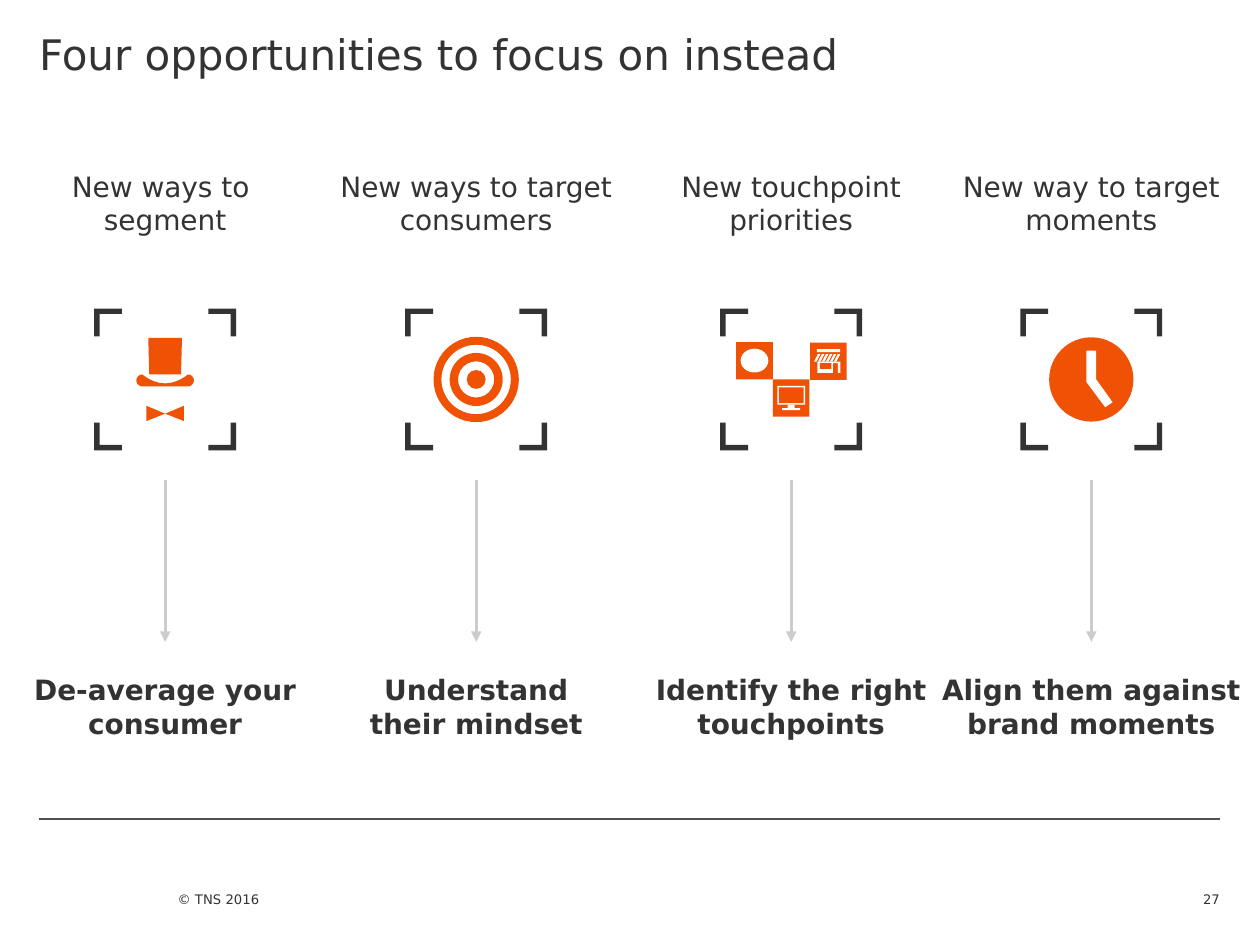
from math import cos, pi, sin

from lxml.etree import SubElement
from pptx import Presentation
from pptx.dml.color import RGBColor
from pptx.enum.shapes import MSO_CONNECTOR, MSO_SHAPE
from pptx.enum.text import MSO_ANCHOR, PP_ALIGN
from pptx.oxml.ns import qn
from pptx.util import Cm, Pt

COLORS = {"text": "333333", "accent": "EF5205", "arrow": "CCCCCC",
          "rule": "525252", "white": "FFFFFF"}
FONT = "DejaVu Sans"
TITLE = "Four opportunities to focus on instead"
COPYRIGHT = "© TNS 2016"
PAGE = "27"

COLUMNS = [
    {"x": 3.33, "head": "New ways to \vsegment", "head_w": 6.2,
     "action": "De-average your consumer", "action_w": 5.41, "icon": "hat"},
    {"x": 9.6, "head": "New ways to target consumers", "head_w": 6.15,
     "action": "Understand their mindset", "action_w": 5.41, "icon": "target"},
    {"x": 15.95, "head": "New touchpoint priorities", "head_w": 5.77,
     "action": "Identify the right touchpoints", "action_w": 5.79, "icon": "touchpoints"},
    {"x": 22, "head": "New way to target moments", "head_w": 6.17,
     "action": "Align them against brand moments", "action_w": 6.1, "icon": "clock"},
]

ICON_Y = 7.65
FRAME = 2.86
CORNER = 0.56
BAND = 0.11
TILE = 0.74


def rect(color, x, y, w, h):
    return MSO_SHAPE.RECTANGLE, color, (x, y, w, h)


def disc(color, d):
    return MSO_SHAPE.OVAL, color, (-d / 2, -d / 2, d, d)


def ring(color, d, band):
    return MSO_SHAPE.DONUT, color, (-d / 2, -d / 2, d, d), band / d


def poly(color, *points):
    return None, color, points


def corner(side_x, side_y):
    out = FRAME / 2
    edge, end = out - BAND, out - CORNER
    outline = ((end, out), (out, out), (out, end), (edge, end), (edge, edge), (end, edge))
    return poly("text", *[(side_x * x, side_y * y) for x, y in outline])


def brim():
    end_x, end_y, radius, dip, steps = 0.46, 0.02, 0.12, 0.18, 12
    turns = [pi * i / steps for i in range(steps + 1)]
    left = [(-end_x - radius * sin(a), end_y - radius * cos(a)) for a in turns]
    right = [(-x, y) for x, y in reversed(left)]
    curve = [(end_x * cos(a), end_y - radius + dip * sin(a) ** 2) for a in turns]
    return left + right + curve


def slat(i):
    x = 0.46 + 0.08 * i
    return poly("white", (x, -0.36), (x + 0.08, -0.51), (x + 0.13, -0.51), (x + 0.05, -0.36))


CORNERS = [corner(x, y) for x in (-1, 1) for y in (-1, 1)]

ICONS = {
    "hat": [
        poly("accent", (-0.34, -0.84), (0.34, -0.84), (0.32, -0.1), (-0.32, -0.1)),
        poly("accent", *brim()),
        *[poly("accent", (side * 0.38, 0.53), (0, 0.69), (side * 0.38, 0.84))
          for side in (-1, 1)],
    ],
    "target": [ring("accent", 1.72, 0.16), ring("accent", 1.07, 0.17), disc("accent", 0.38)],
    "touchpoints": [
        *[rect("accent", x, y, TILE, 0.75)
          for x, y in ((-1.11, -0.75), (-0.37, 0), (0.38, -0.74))],
        (MSO_SHAPE.OVAL, "white", (-1.02, -0.62, 0.56, 0.48)),
        rect("white", 0.52, -0.61, 0.47, 0.06),
        *[slat(i) for i in range(6)],
        poly("white", (0.53, -0.36), (0.99, -0.36), (0.99, -0.13), (0.94, -0.13),
             (0.94, -0.33), (0.84, -0.33), (0.84, -0.13), (0.53, -0.13)),
        rect("accent", 0.58, -0.33, 0.23, 0.12),
        rect("white", -0.28, 0.13, 0.56, 0.38),
        rect("accent", -0.25, 0.16, 0.5, 0.32),
        rect("white", -0.07, 0.51, 0.14, 0.08),
        rect("white", -0.18, 0.58, 0.36, 0.04),
    ],
    "clock": [
        disc("accent", 1.7),
        poly("white", (-0.1, -0.58), (0.1, -0.58), (0.1, 0), (0.43, 0.46),
             (0.28, 0.56), (-0.1, 0.05)),
    ],
}


def rgb(name):
    return RGBColor.from_string(COLORS[name])


def add_text(s, text, box, size, bold=False, align=PP_ALIGN.LEFT,
             anchor=MSO_ANCHOR.TOP, top=0):
    tf = s.shapes.add_textbox(*map(Cm, box)).text_frame
    tf.word_wrap = True
    tf.vertical_anchor = anchor
    tf.margin_left = tf.margin_right = tf.margin_bottom = 0
    tf.margin_top = Cm(top)
    tf.text = text
    p = tf.paragraphs[0]
    p.alignment = align
    for r in p.runs:
        r.font.name = FONT
        r.font.size = Pt(size)
        r.font.bold = bold
        r.font.color.rgb = rgb("text")


def add_line(s, x1, y1, x2, y2, color, width, arrow=False):
    sp = s.shapes.add_connector(MSO_CONNECTOR.STRAIGHT, *map(Cm, (x1, y1, x2, y2)))
    sp.line.color.rgb = rgb(color)
    sp.line.width = Pt(width)
    spPr = sp._element.spPr
    if arrow:
        SubElement(spPr.find(qn("a:ln")), qn("a:tailEnd"), type="triangle")
    SubElement(spPr, qn("a:effectLst"))


def add_part(s, cx, cy, kind, color, coords, *adjustments):
    if kind is None:
        points = [(Cm(cx + x), Cm(cy + y)) for x, y in coords]
        builder = s.shapes.build_freeform(*points[0])
        builder.add_line_segments(points[1:])
        sp = builder.convert_to_shape()
    else:
        x, y, w, h = coords
        sp = s.shapes.add_shape(kind, Cm(cx + x), Cm(cy + y), Cm(w), Cm(h))
    for i, value in enumerate(adjustments):
        sp.adjustments[i] = value
    sp.shadow.inherit = False
    sp.fill.solid()
    sp.fill.fore_color.rgb = rgb(color)
    sp.line.fill.background()


def main():
    prs = Presentation()
    prs.slide_width, prs.slide_height = Cm(25.4), Cm(19.05)
    s = prs.slides.add_slide(prs.slide_layouts[6])

    add_line(s, 0.79, 16.51, 24.59, 16.51, "rule", 0.75)
    add_text(s, COPYRIGHT, (3.58, 17.58, 7.06, 0.7), 7.5, anchor=MSO_ANCHOR.BOTTOM)
    add_text(s, PAGE, (23.19, 17.58, 1.4, 0.7), 7.5, align=PP_ALIGN.RIGHT,
             anchor=MSO_ANCHOR.BOTTOM)
    add_text(s, TITLE, (0.79, 0, 23.8, 2.87), 24, top=0.58)

    for col in COLUMNS:
        x, head_w, action_w = col["x"], col["head_w"], col["action_w"]
        add_text(s, col["head"], (x - head_w / 2, 3.28, head_w, 2.21), 16,
                 align=PP_ALIGN.CENTER, top=0.13)
        for part in CORNERS + ICONS[col["icon"]]:
            add_part(s, x, ICON_Y, *part)
        add_line(s, x, 9.68, x, 12.94, "arrow", 1.5, arrow=True)
        add_text(s, col["action"], (x - action_w / 2, 12.98, action_w, 2.21), 16,
                 bold=True, align=PP_ALIGN.CENTER, top=0.58)

    prs.save("out.pptx")


if __name__ == "__main__":
    main()
